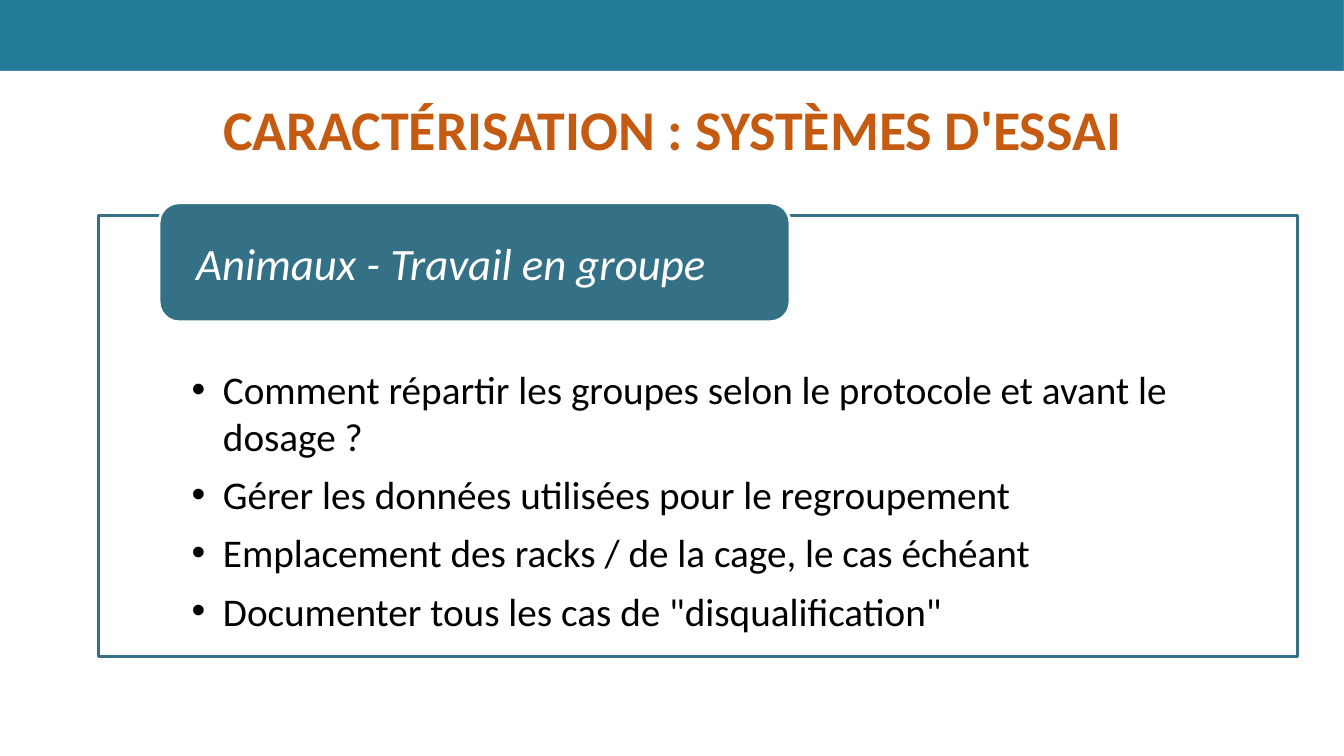
from dataclasses import dataclass

from lxml.etree import SubElement
from pptx import Presentation
from pptx.dml.color import RGBColor
from pptx.enum.shapes import MSO_SHAPE as Preset
from pptx.enum.text import MSO_ANCHOR as Anchor, PP_ALIGN as Align
from pptx.oxml.ns import qn
from pptx.shapes.autoshape import Shape
from pptx.slide import Slide
from pptx.util import Cm, Pt

WHITE = RGBColor(0xFF, 0xFF, 0xFF)
BLACK = RGBColor(0x00, 0x00, 0x00)
BANNER_FILL = RGBColor(0x23, 0x7C, 0x9A)
BANNER_LINE = RGBColor(0x4B, 0x7E, 0xBC)
TEAL = RGBColor(0x35, 0x71, 0x86)
ORANGE = RGBColor(0xC5, 0x5A, 0x11)
FONT = "Calibri"
QUESTIONS = (
    "Comment répartir les groupes selon le protocole et avant le dosage ?",
    "Gérer les données utilisées pour le regroupement",
    "Emplacement des racks / de la cage, le cas échéant",
    'Documenter tous les cas de "disqualification"',
)


@dataclass(frozen=True)
class Area:
    left: float
    top: float
    width: float
    height: float

    def lengths(self) -> tuple[Cm, ...]:
        return tuple(map(Cm, (self.left, self.top, self.width, self.height)))


@dataclass(frozen=True)
class Panel:
    preset: Preset
    area: Area
    fill: RGBColor
    line: RGBColor
    line_width: float


@dataclass(frozen=True)
class TextStyle:
    size: int
    color: RGBColor
    align: Align = Align.LEFT
    anchor: Anchor = Anchor.TOP
    insets: tuple[float, float, float, float] = (0, 0, 0, 0)
    bold: bool = False
    italic: bool = False
    bulleted: bool = False
    space_after: int = 0


BANNER = Panel(Preset.RECTANGLE, Area(0, 0, 33.87, 1.78), BANNER_FILL, BANNER_LINE, 0.75)
FRAME = Panel(Preset.RECTANGLE, Area(2.49, 5.44, 30.2, 11.1), WHITE, TEAL, 2)
TAB = Panel(Preset.ROUNDED_RECTANGLE, Area(4.01, 5.11, 15.9, 3), TEAL, WHITE, 2)
TITLE_AREA = Area(1.7, 2.26, 30.48, 1.65)

TITLE_STYLE = TextStyle(40, ORANGE, Align.CENTER, insets=(0.25, 0.13, 0.25, 0), bold=True)
LIST_STYLE = TextStyle(28, BLACK, insets=(2.34, 3.76, 2.34, 0.56), bulleted=True, space_after=8)
TAB_STYLE = TextStyle(32, WHITE, anchor=Anchor.MIDDLE, insets=(0.79, 0, 0.79, 0), italic=True)


def add_panel(page: Slide, panel: Panel) -> Shape:
    shape = page.shapes.add_shape(panel.preset, *panel.area.lengths())
    shape.shadow.inherit = False
    shape.fill.solid()
    shape.fill.fore_color.rgb = panel.fill
    shape.line.color.rgb = panel.line
    shape.line.width = Pt(panel.line_width)
    return shape


def set_opacity(shape: Shape, percent: int) -> None:
    color = next(shape.fill._xPr.iter(qn("a:srgbClr")))
    SubElement(color, qn("a:alpha"), val=str(percent * 1000))


def write(shape: Shape, lines: tuple[str, ...], style: TextStyle) -> None:
    box = shape.text_frame
    box.word_wrap = True
    box.vertical_anchor = style.anchor
    box.margin_left, box.margin_top, box.margin_right, box.margin_bottom = map(Cm, style.insets)
    for index, line in enumerate(lines):
        para = box.add_paragraph() if index else box.paragraphs[0]
        para.alignment = style.align
        para.space_after = Pt(style.space_after)
        if style.bulleted:
            properties = para._p.get_or_add_pPr()
            properties.set("marL", str(Cm(0.79)))
            properties.set("indent", str(Cm(-0.79)))
            SubElement(properties, qn("a:buFont"), typeface="Arial")
            SubElement(properties, qn("a:buChar"), char="•")
        span = para.add_run()
        span.text = line
        span.font.name = FONT
        span.font.size = Pt(style.size)
        span.font.bold = style.bold
        span.font.italic = style.italic
        span.font.color.rgb = style.color


def main() -> None:
    deck = Presentation()
    deck.slide_width, deck.slide_height = Cm(33.87), Cm(19.05)
    page = deck.slides.add_slide(deck.slide_layouts[6])

    add_panel(page, BANNER)
    title = page.shapes.add_textbox(*TITLE_AREA.lengths())
    write(title, ("CARACTÉRISATION : SYSTÈMES D'ESSAI",), TITLE_STYLE)

    frame = add_panel(page, FRAME)
    set_opacity(frame, 90)
    write(frame, QUESTIONS, LIST_STYLE)

    tab = add_panel(page, TAB)
    write(tab, ("Animaux - Travail en groupe",), TAB_STYLE)

    deck.save("out.pptx")


if __name__ == "__main__":
    main()
